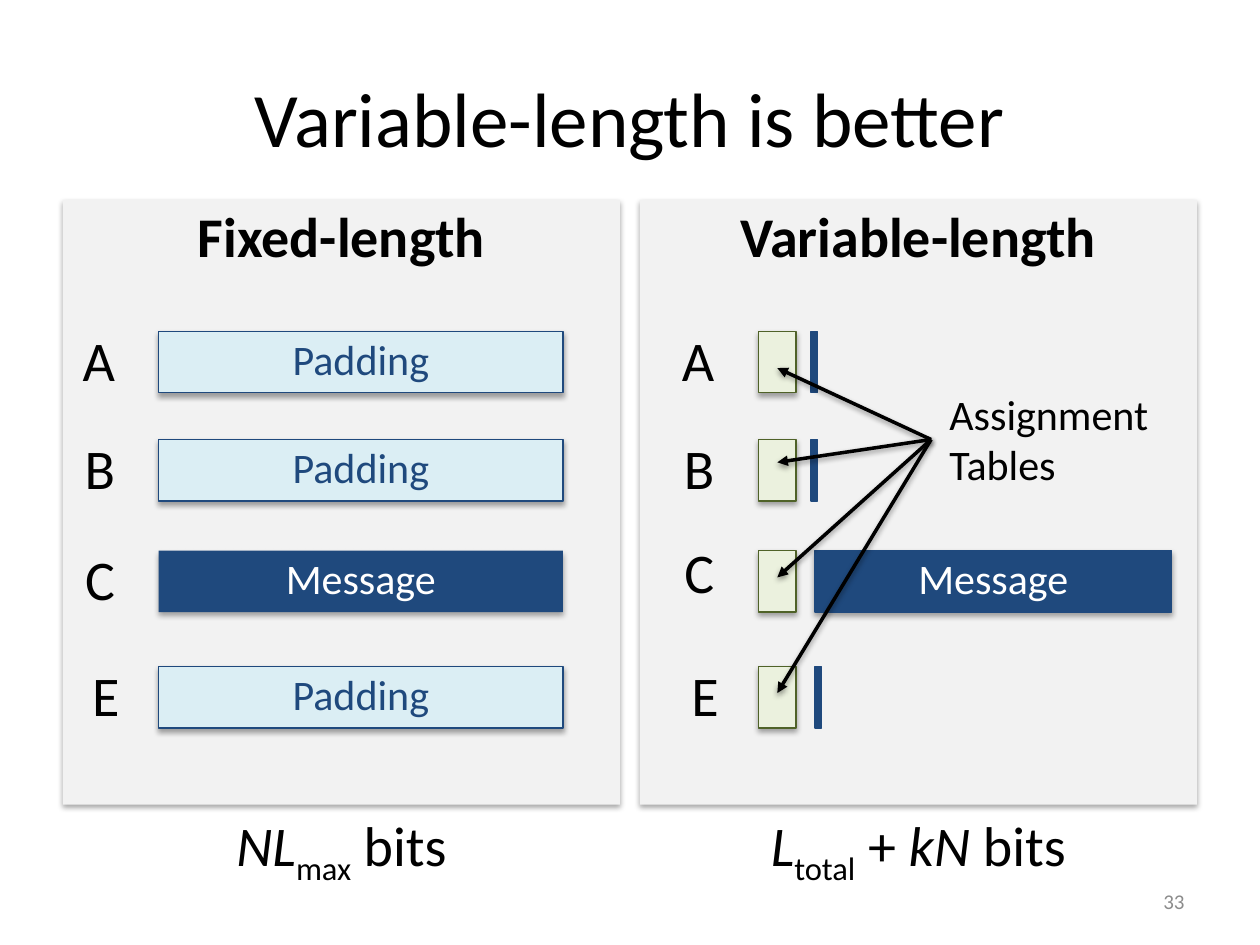
from dataclasses import dataclass

from lxml.etree import SubElement
from pptx import Presentation
from pptx.dml.color import RGBColor
from pptx.enum.shapes import MSO_CONNECTOR, MSO_SHAPE
from pptx.enum.text import MSO_ANCHOR, PP_ALIGN
from pptx.oxml.ns import qn
from pptx.util import Cm, Pt


@dataclass(frozen=True)
class Theme:
    font: str = "Calibri"
    black: str = "000000"
    white: str = "FFFFFF"
    grey: str = "8C8C8C"
    panel: str = "F2F2F2"
    navy: str = "1F497D"
    pale: str = "DBEEF4"
    lime: str = "EBF1DE"
    olive: str = "4F6228"
    title: int = 44
    head: int = 32
    body: int = 24
    small: int = 12


T = Theme()
PANEL_W, PANEL_H = 11.23, 12.19
ROWS = {"A": 2.65, "B": 4.83, "C": 7.07, "E": 9.41}  # bar tops in a panel
BAR_H = 1.24


def cast(shape, dist=23000, alpha=35000):
    """Give a soft shadow straight below."""
    props = shape._element.spPr
    for old in props.findall(qn("a:effectLst")):
        props.remove(old)
    drop = SubElement(SubElement(props, qn("a:effectLst")), qn("a:outerShdw"),
                      blurRad="40000", dist=str(dist), dir="5400000", rotWithShape="0")
    tint = SubElement(drop, qn("a:srgbClr"), val=T.black)
    SubElement(tint, qn("a:alpha"), val=str(alpha))


def write(shape, runs, size, color=T.black, align=PP_ALIGN.CENTER, bold=False):
    """Fill a shape with one paragraph; runs are (text, style) pairs."""
    shape.text_frame.word_wrap = True
    para = shape.text_frame.paragraphs[0]
    para.alignment = align
    font = para.font
    font.name, font.size, font.bold = T.font, Pt(size), bold
    font.color.rgb = RGBColor.from_string(color)
    for text, style in runs:
        run = para.add_run()
        run.text = text
        if style == "italic":
            run.font.italic = True
        elif style == "sub":
            run._r.get_or_add_rPr().set("baseline", "-25000")


def label(slide, x, y, w, h, runs, size, anchor=MSO_ANCHOR.TOP, **look):
    box = slide.shapes.add_textbox(Cm(x), Cm(y), Cm(w), Cm(h))
    box.text_frame.vertical_anchor = anchor
    if isinstance(runs, str):
        runs = [(runs, "")]
    write(box, runs, size, **look)


def block(slide, x, y, w, h, fill, edge=None, shade=True):
    rect = slide.shapes.add_shape(MSO_SHAPE.RECTANGLE, Cm(x), Cm(y), Cm(w), Cm(h))
    rect.fill.solid()
    rect.fill.fore_color.rgb = RGBColor.from_string(fill)
    if edge:
        rect.line.color.rgb = RGBColor.from_string(edge)
        rect.line.width = Pt(0.75)
    else:
        rect.line.fill.background()
    rect.shadow.inherit = False
    if shade:
        cast(rect)
    return rect


def bar(slide, x, y, w, text, fill, edge, color):
    rect = block(slide, x, y, w, BAR_H, fill, edge)
    frame = rect.text_frame
    frame.vertical_anchor = MSO_ANCHOR.MIDDLE
    frame.margin_top, frame.margin_bottom = 0, Cm(0.14)
    write(rect, [(text, "")], T.body, color)


def arrow(slide, x, y, end_x, end_y):
    line = slide.shapes.add_connector(MSO_CONNECTOR.STRAIGHT,
                                      Cm(x), Cm(y), Cm(end_x), Cm(end_y))
    line.line.color.rgb = RGBColor.from_string(T.black)
    line.line.width = Pt(2)
    SubElement(line._element.spPr.find(qn("a:ln")), qn("a:tailEnd"), type="triangle")
    cast(line, 20000, 38000)


def panel(slide, x, y, head, foot, inset, lift):
    """Grey panel with its heading, row letters and bit count."""
    block(slide, x, y, PANEL_W, PANEL_H, T.panel)
    label(slide, x, y - 0.09, PANEL_W, 1.63, head, T.head, bold=True)
    label(slide, x, y + PANEL_H, PANEL_W, 1.63, foot, T.head)
    for name, top in ROWS.items():
        nudge = 0.09 if name == "E" else 0
        label(slide, x + inset + nudge, y + top - lift.get(name, 0.25), 2.16, 1.63,
              name, T.head, align=PP_ALIGN.RIGHT)


def fixed(slide, x, y):
    foot = [("NL", "italic"), ("max", "sub"), (" bits", "")]
    panel(slide, x, y, "Fixed-length", foot, -0.86, {})
    for name, top in ROWS.items():
        if name == "C":
            look = "Message", T.navy, None, T.white
        else:
            look = "Padding", T.pale, T.navy, T.navy
        bar(slide, x + 1.93, y + top, 8.15, *look)


def variable(slide, x, y):
    foot = [("L", "italic"), ("total", "sub"), (" + ", ""),
            ("kN", "italic"), (" bits", "")]
    panel(slide, x, y, "Variable-length", foot, -0.41, {"C": 0.38})

    # Assignment tables, then what each sender adds
    for name, top in ROWS.items():
        block(slide, x + 2.39, y + top, 0.76, BAR_H, T.lime, T.olive)
        if name == "C":
            bar(slide, x + 3.53, y + top, 7.19, "Message", T.navy, T.navy, T.white)
        else:
            left = 3.53 if name == "E" else 3.45
            block(slide, x + left, y + top, 0.13, BAR_H, T.navy, T.navy, shade=False)

    # Note with an arrow to every table
    label(slide, x + 5.99, y + 3.67, 4.7, 2.31, "Assignment Tables", T.body,
          align=PP_ALIGN.LEFT)
    for top, drop in zip(ROWS.values(), (0.74, 0.46, 0.54, 0.53)):
        arrow(slide, x + 5.87, y + 4.83, x + 2.77, y + top + drop)


def main():
    deck = Presentation()
    deck.slide_width, deck.slide_height = Cm(25.4), Cm(19.05)
    slide = deck.slides.add_slide(deck.slide_layouts[6])

    label(slide, 1.27, 0.76, 22.86, 3.18, "Variable-length is better", T.title,
          MSO_ANCHOR.MIDDLE)
    fixed(slide, 1.27, 4.03)
    variable(slide, 12.9, 4.03)
    label(slide, 18.2, 17.66, 5.93, 1.01, "33", T.small, MSO_ANCHOR.MIDDLE,
          color=T.grey, align=PP_ALIGN.RIGHT)
    deck.save("out.pptx")


if __name__ == "__main__":
    main()
